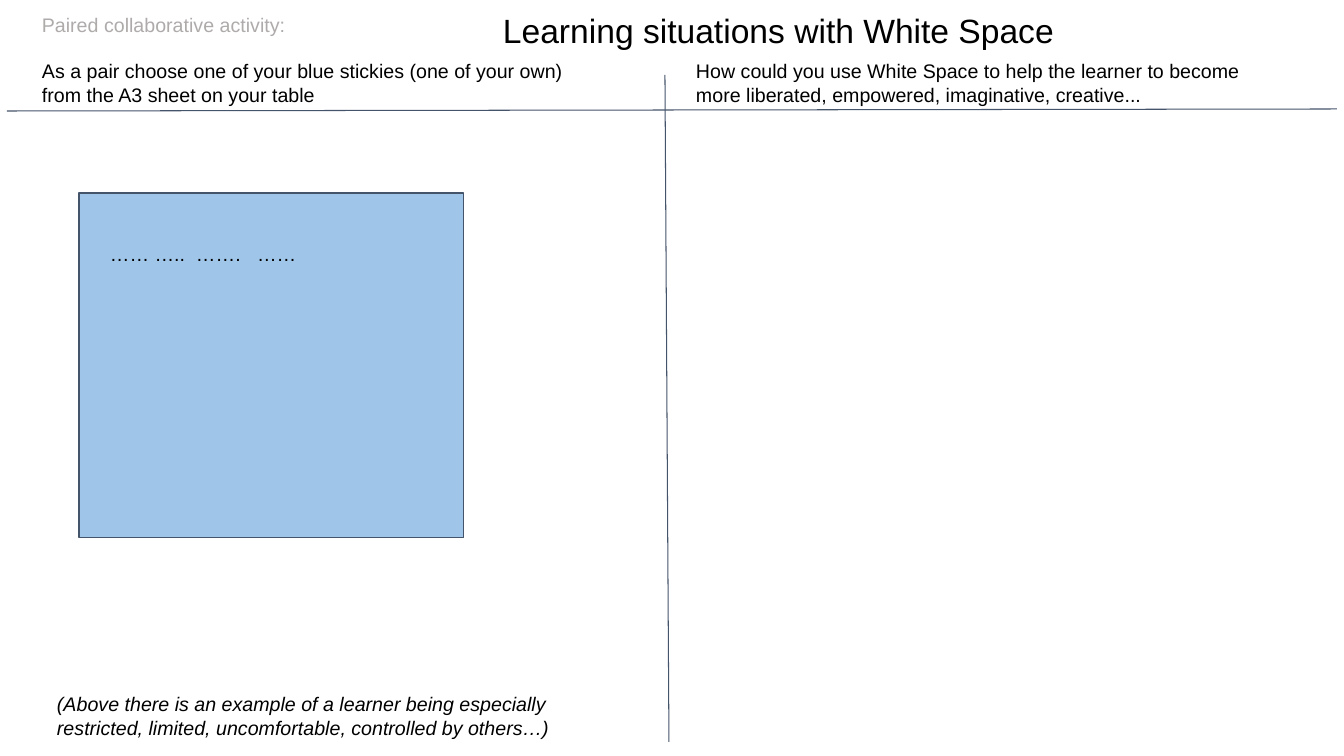
import pptx
import pptx.dml.color
import pptx.enum.shapes
import pptx.enum.text
import pptx.util
from pptx.oxml.ns import qn
from lxml import etree

RGBColor = pptx.dml.color.RGBColor
BLACK = RGBColor(0x00, 0x00, 0x00)
GREY = RGBColor(0xAF, 0xAB, 0xAB)
SLATE = RGBColor(0x44, 0x54, 0x6A)
NOTE_BLUE = RGBColor(0x9F, 0xC5, 0xE8)

EMU_PER_PX = 914400 / 100.8
SLIDE_SIZE = (1344, 756)

# start x, start y, end x, end y
DIVIDERS = [(665, 75, 669, 742), (7, 111, 1337, 109)]
STICKY_NOTE = (79, 193, 385, 345)

# words, (left, top, width, height), size, colour, italic
PARAGRAPHS = [
    ("Learning situations with White Space", (493, 0, 681, 59), 24, BLACK, False),
    ("As a pair choose one of your blue stickies (one of your own) "
     "from the A3 sheet on your table", (32, 49, 578, 59), 14, BLACK, False),
    ("How could you use White Space to help the learner to become "
     "more liberated, empowered, imaginative, creative...",
     (686, 49, 578, 59), 14, BLACK, False),
    ("(Above there is an example of a learner being especially "
     "restricted, limited, uncomfortable, controlled by others…)",
     (47, 682, 578, 59), 14, BLACK, True),
]
LABELS = [
    ("Paired collaborative activity:", (32, 8, 265, 34), 14, GREY, False),
    ("…… …..  …….   ……", (100, 237, 209, 34), 14, BLACK, False),
]


def px(*lengths):
    return [pptx.util.Emu(round(length * EMU_PER_PX)) for length in lengths]


def style_line(line):
    line.color.rgb = SLATE
    line.width = pptx.util.Pt(0.75)


def add_divider(slide, ends):
    divider = slide.shapes.add_connector(
        pptx.enum.shapes.MSO_CONNECTOR.STRAIGHT, *px(*ends))
    style_line(divider.line)
    etree.SubElement(divider._element.spPr, qn("a:effectLst"))


def add_sticky_note(slide):
    note = slide.shapes.add_shape(
        pptx.enum.shapes.MSO_SHAPE.RECTANGLE, *px(*STICKY_NOTE))
    note.shadow.inherit = False
    note.fill.solid()
    note.fill.fore_color.rgb = NOTE_BLUE
    style_line(note.line)


def add_text(slide, words, box, size, colour, italic, wrap):
    """Wrapped text has a fixed box; a label grows to fit its one line."""
    frame = slide.shapes.add_textbox(*px(*box)).text_frame
    frame.word_wrap = wrap
    if wrap:
        frame.margin_top, frame.margin_bottom = px(10, 10)
        frame.margin_left, frame.margin_right = px(10, 10)
    else:
        frame.auto_size = pptx.enum.text.MSO_AUTO_SIZE.SHAPE_TO_FIT_TEXT
    paragraph = frame.paragraphs[0]
    paragraph.text = words
    font = paragraph.font
    font.name = "Arial"
    font.size = pptx.util.Pt(size)
    font.color.rgb = colour
    font.italic = italic


def main():
    deck = pptx.Presentation()
    deck.slide_width, deck.slide_height = px(*SLIDE_SIZE)
    slide = deck.slides.add_slide(deck.slide_layouts[6])
    for ends in DIVIDERS:
        add_divider(slide, ends)
    add_sticky_note(slide)
    for paragraph in PARAGRAPHS:
        add_text(slide, *paragraph, wrap=True)
    for label in LABELS:
        add_text(slide, *label, wrap=False)
    deck.save("out.pptx")


if __name__ == "__main__":
    main()
